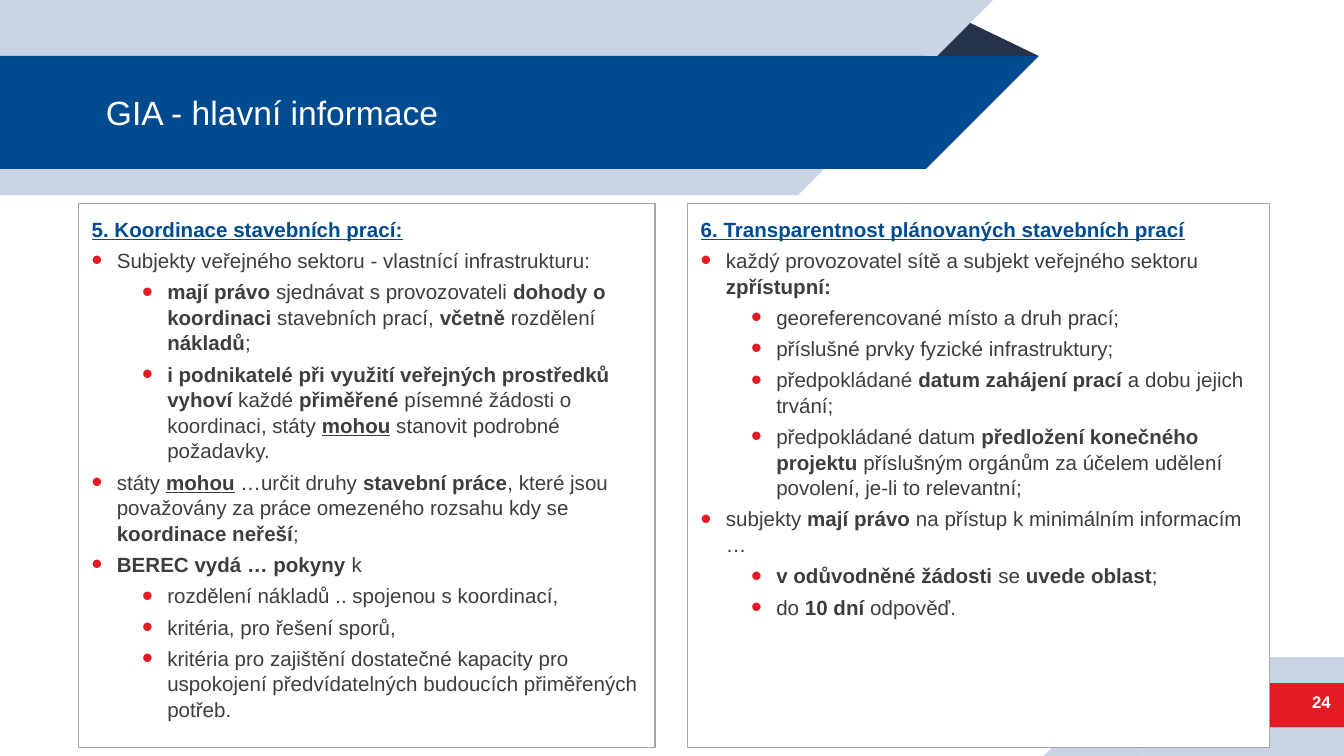
from lxml import etree
from pptx import Presentation
from pptx.dml.color import RGBColor
from pptx.enum.shapes import MSO_SHAPE as Preset
from pptx.enum.text import MSO_ANCHOR as Anchor, PP_ALIGN as Align
from pptx.oxml.ns import qn
from pptx.util import Pt

WHITE = RGBColor(0xFF, 0xFF, 0xFF)
BLUE = RGBColor(0x00, 0x4B, 0x8F)
PALE = RGBColor(0xCA, 0xD3, 0xE3)
NAVY = RGBColor(0x26, 0x32, 0x48)
RED = RGBColor(0xE4, 0x1B, 0x23)
GREY = RGBColor(0xA6, 0xA6, 0xA6)
INK = RGBColor(0x3D, 0x3D, 0x3D)

COORDINATION = [
    (0, "Subjekty veřejného sektoru - vlastnící infrastrukturu:"),
    (1, "*mají právo *sjednávat s provozovateli *dohody o koordinaci* stavebních prací, "
        "*včetně* rozdělení *nákladů*;"),
    (1, "*i podnikatelé při využití veřejných prostředků vyhoví* každé *přiměřené* písemné "
        "žádosti o koordinaci, státy *_mohou* stanovit podrobné požadavky."),
    (0, "státy *_mohou* …určit druhy *stavební práce*, které jsou považovány za práce "
        "omezeného rozsahu kdy se *koordinace neřeší*;"),
    (0, "*BEREC vydá … pokyny *k"),
    (1, "rozdělení nákladů .. spojenou s koordinací,"),
    (1, "kritéria, pro řešení sporů,"),
    (1, "kritéria pro zajištění dostatečné kapacity pro uspokojení předvídatelných "
        "budoucích přiměřených potřeb."),
]
TRANSPARENCY = [
    (0, "každý provozovatel sítě a subjekt veřejného sektoru *zpřístupní:*"),
    (1, "georeferencované místo a druh prací;"),
    (1, "příslušné prvky fyzické infrastruktury;"),
    (1, "předpokládané *datum zahájení prací *a dobu jejich trvání;"),
    (1, "předpokládané datum *předložení konečného projektu* příslušným orgánům za účelem "
        "udělení povolení, je-li to relevantní;"),
    (0, "subjekty *mají právo *na přístup k minimálním informacím …"),
    (1, "*v odůvodněné žádosti *se *uvede oblast*;"),
    (1, "do *10 dní *odpověď."),
]


class SlideBuilder:
    """Holds the deck style and draws each kind of element on the current slide."""

    font_name = "Arial"
    body_size = 11
    line_spacing = 1.04
    gap = 3
    hang = 13.5
    level_step = 27

    def __init__(self, slide):
        self.slide = slide

    def shape(self, preset, box, fill, line=None, rotation=0, flip=False):
        shape = self.slide.shapes.add_shape(preset, *map(Pt, box))
        shape.shadow.inherit = False
        shape.fill.solid()
        shape.fill.fore_color.rgb = fill
        if line is None:
            shape.line.fill.background()
        else:
            shape.line.color.rgb = line
            shape.line.width = Pt(0.75)
        shape.rotation = rotation
        if flip:
            shape._element.spPr.find(qn("a:xfrm")).set("flipH", "1")
        return shape

    def band_from_left(self, top, width, height, fill):
        self.shape(Preset.RECTANGLE, (0, top, width, height), fill)
        self.shape(Preset.RIGHT_TRIANGLE, (width, top, height, height), fill,
                   rotation=180, flip=True)

    def run(self, paragraph, text, size, color, **formats):
        run = paragraph.add_run()
        run.text = text
        run.font.color.rgb = color
        values = {"name": self.font_name, "size": Pt(size), "bold": False, **formats}
        for name, value in values.items():
            setattr(run.font, name, value)

    def label(self, box, text, size, align=Align.LEFT, **formats):
        frame = self.slide.shapes.add_textbox(*map(Pt, box)).text_frame
        frame.word_wrap = True
        frame.vertical_anchor = Anchor.MIDDLE
        frame.paragraphs[0].alignment = align
        self.run(frame.paragraphs[0], text, size, WHITE, **formats)

    def bullet(self, paragraph, level):
        properties = paragraph._p.get_or_add_pPr()
        properties.set("marL", str(Pt(self.hang + level * self.level_step)))
        properties.set("indent", str(-Pt(self.hang)))
        color = etree.SubElement(properties, qn("a:buClr"))
        etree.SubElement(color, qn("a:srgbClr")).set("val", str(RED))
        etree.SubElement(properties, qn("a:buSzPct")).set("val", "150000")
        etree.SubElement(properties, qn("a:buFont")).set("typeface", self.font_name)
        etree.SubElement(properties, qn("a:buChar")).set("char", "•")
        paragraph.level = level
        paragraph.space_before = Pt(self.gap)

    def panel(self, left, width, heading, points):
        frame = self.shape(Preset.RECTANGLE, (left, 109, width, 291.5), WHITE, GREY).text_frame
        frame.word_wrap = True
        frame.vertical_anchor = Anchor.TOP
        frame.margin_top = Pt(6.6)
        self.run(frame.paragraphs[0], heading, self.body_size, BLUE, bold=True, underline=True)
        for level, text in points:
            paragraph = frame.add_paragraph()
            self.bullet(paragraph, level)
            for index, part in enumerate(text.split("*")):
                if part:
                    self.run(paragraph, part.lstrip("_"), self.body_size, INK,
                             bold=index % 2 == 1, underline=part.startswith("_"))
        for paragraph in frame.paragraphs:
            paragraph.alignment = Align.LEFT
            paragraph.line_spacing = self.line_spacing


def main():
    deck = Presentation()
    deck.slide_width, deck.slide_height = Pt(720), Pt(405)
    builder = SlideBuilder(deck.slides.add_slide(deck.slide_layouts[6]))

    fold = builder.shape(Preset.ISOSCELES_TRIANGLE, (495.5, 10, 61, 20), NAVY)
    fold.adjustments[0] = 0.32
    builder.band_from_left(0, 427.5, 104.5, PALE)
    builder.band_from_left(30, 496, 60.5, BLUE)

    builder.shape(Preset.RECTANGLE, (612, 352, 108, 53), PALE)
    builder.shape(Preset.RIGHT_TRIANGLE, (559, 352, 53, 53), PALE, flip=True)
    builder.shape(Preset.RECTANGLE, (571, 366, 149, 23.5), RED)

    builder.label((49.7, 30, 490, 60.5), "GIA - hlavní informace", 18)
    builder.label((644.5, 365, 75.5, 21.6), "24", 9, Align.RIGHT, bold=True)
    builder.panel(42, 309, "5. Koordinace stavebních prací:", COORDINATION)
    builder.panel(368.3, 311.7, "6. Transparentnost plánovaných stavebních prací", TRANSPARENCY)
    deck.save("out.pptx")


if __name__ == "__main__":
    main()
